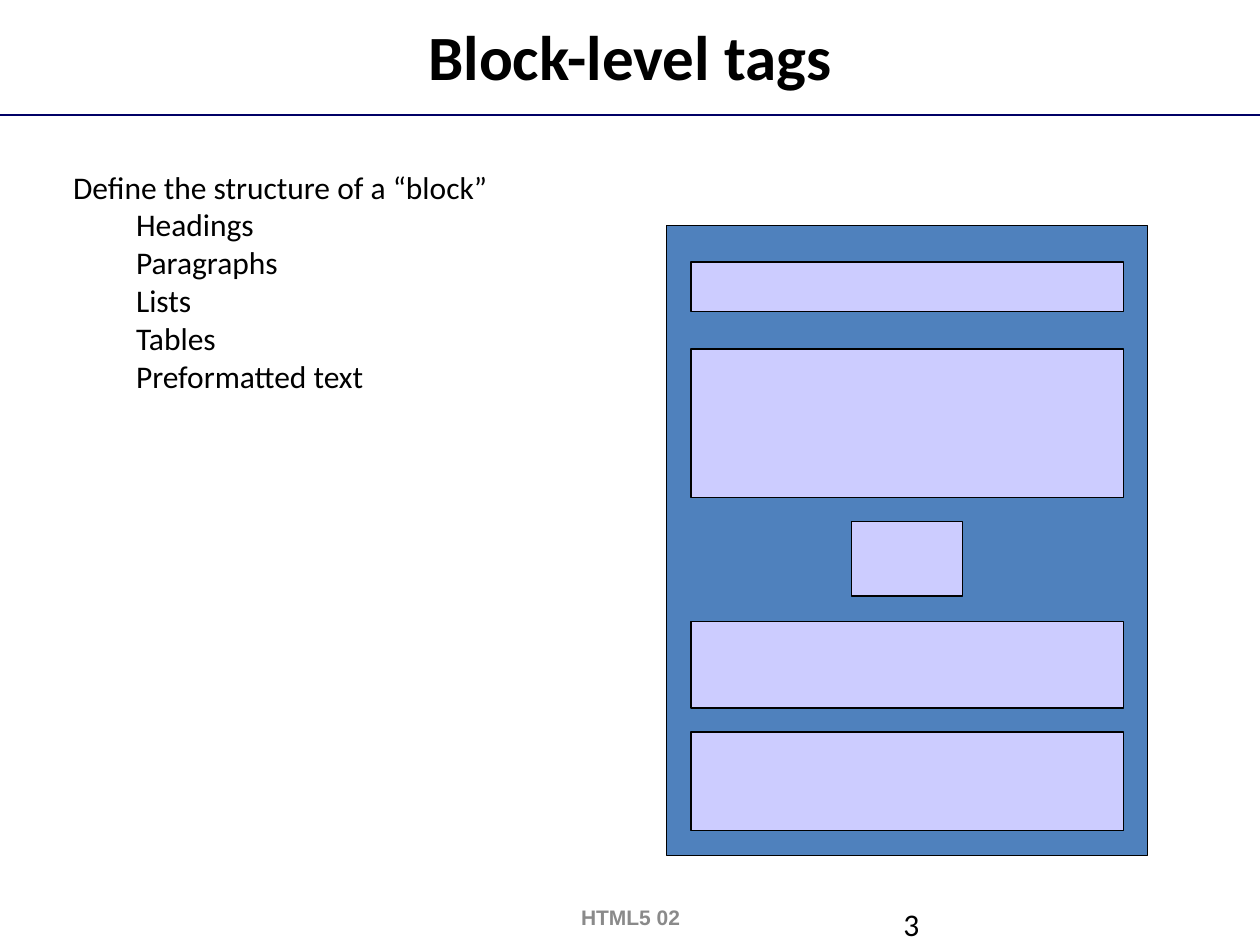
from pptx import Presentation
from pptx.dml.color import RGBColor
from pptx.enum.shapes import MSO_CONNECTOR, MSO_SHAPE
from pptx.enum.text import PP_ALIGN
from pptx.oxml.ns import qn
from pptx.util import Inches, Pt
from lxml.etree import SubElement


def color(value):
    return RGBColor.from_string(value)


class SlideBuilder:
    font = "Calibri"
    ink = "000000"
    outline = 0.75

    def __init__(self, slide):
        self.s = slide

    def text(self, x, y, w, h, lines, size=18, font=None, ink=None,
             bold=False, align=PP_ALIGN.LEFT):
        sp = self.s.shapes.add_textbox(Inches(x), Inches(y), Inches(w), Inches(h))
        tf = sp.text_frame
        tf.word_wrap = True
        tf.margin_left = tf.margin_right = tf.margin_top = tf.margin_bottom = 0
        for i, (content, level) in enumerate(lines):
            p = tf.add_paragraph() if i else tf.paragraphs[0]
            p.alignment = align
            p.level = level
            if level:
                pPr = p._p.get_or_add_pPr()
                pPr.set("marL", str(Inches(0.5 * level)))
                pPr.set("indent", "0")
            r = p.add_run()
            r.text = content
            r.font.name = font or self.font
            r.font.size = Pt(size)
            r.font.bold = bold
            r.font.color.rgb = color(ink or self.ink)

    def box(self, x, y, w, h, fill):
        sp = self.s.shapes.add_shape(
            MSO_SHAPE.RECTANGLE, Inches(x), Inches(y), Inches(w), Inches(h))
        sp.shadow.inherit = False
        sp.fill.solid()
        sp.fill.fore_color.rgb = color(fill)
        sp.line.color.rgb = color(self.ink)
        sp.line.width = Pt(self.outline)

    def rule(self, x1, y1, x2, y2, ink, width):
        sp = self.s.shapes.add_connector(
            MSO_CONNECTOR.STRAIGHT, Inches(x1), Inches(y1), Inches(x2), Inches(y2))
        sp.line.color.rgb = color(ink)
        sp.line.width = Pt(width)
        SubElement(sp._element.spPr, qn("a:effectLst"))


def main():
    prs = Presentation()
    prs.slide_width = Inches(10)
    prs.slide_height = Inches(7.5)
    b = SlideBuilder(prs.slides.add_slide(prs.slide_layouts[6]))

    b.rule(0, 0.91, 10, 0.91, "000066", 1)
    b.text(1.66, 0.14, 6.68, 0.61, [("Block-level tags", 0)],
           size=36, bold=True, align=PP_ALIGN.CENTER)

    tags = ["Headings", "Paragraphs", "Lists", "Tables", "Preformatted text"]
    b.text(0.58, 1.33, 8.85, 2.36,
           [("Define the structure of a “block”", 0)] + [(t, 1) for t in tags])

    page_x, page_w = 5.29, 3.82
    b.box(page_x, 1.79, page_w, 5, "4F81BD")
    blocks = [(2.08, 3.43, 0.39), (2.77, 3.43, 1.18), (4.14, 0.88, 0.59),
              (4.93, 3.43, 0.69), (5.81, 3.43, 0.78)]
    for y, w, h in blocks:
        b.box(page_x + (page_w - w) / 2, y, w, h, "CCCCFF")

    b.text(7.17, 7.18, 2.33, 0.27, [("3", 0)])
    b.text(3.42, 7.18, 3.17, 0.2, [("HTML5 02", 0)], size=12, font="Arial",
           ink="8A8A8A", bold=True, align=PP_ALIGN.CENTER)

    prs.save("out.pptx")


if __name__ == "__main__":
    main()
